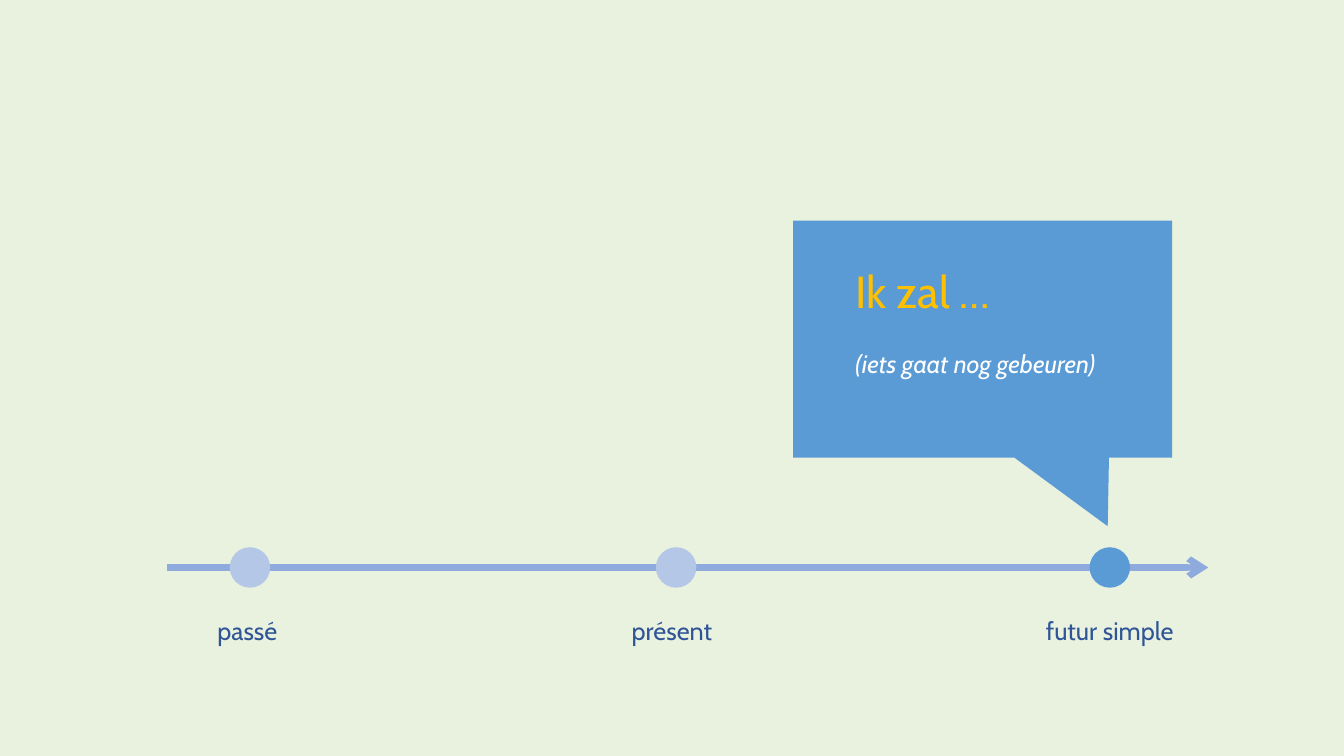
from pptx import Presentation
from pptx import util as u
from pptx.dml.color import RGBColor
from pptx.enum import shapes, text
from pptx.oxml.ns import qn
from lxml import etree

FONT = "Cabin"
BACKGROUND, AXIS, DIM, ACTIVE = "E9F1DF", "8FAADC", "B4C7E7", "5B9BD5"
LABEL, HIGHLIGHT, WHITE = "2F5597", "FFC000", "FFFFFF"

AXIS_Y = 14.3
DOT = 1.02
LABEL_LEFT, LABEL_STEP = 5.23, 10.44

# Tense, centre of its dot, label width, dot colour
TENSES = [
    ("passé", 6.3, 3.18, DIM),
    ("présent", 17.04, 3.18, DIM),
    ("futur simple", 27.97, 5.51, ACTIVE),
]


def paint(fill, color):
    fill.solid()
    fill.fore_color.rgb = RGBColor.from_string(color)


def add_solid(s, kind, left, top, width, height, color):
    """Add a preset shape without outline or shadow; lengths in cm."""
    sp = s.shapes.add_shape(kind, u.Cm(left), u.Cm(top), u.Cm(width), u.Cm(height))
    paint(sp.fill, color)
    sp.line.fill.background()
    sp.shadow.inherit = False
    return sp


def add_arrow(s, x1, x2, y, color, weight):
    line = s.shapes.add_connector(
        shapes.MSO_CONNECTOR.STRAIGHT, u.Cm(x1), u.Cm(y), u.Cm(x2), u.Cm(y))
    paint(line.line.fill, color)
    line.line.width = u.Pt(weight)
    etree.SubElement(line.line._get_or_add_ln(), qn("a:tailEnd"), type="arrow")
    etree.SubElement(line._element.spPr, qn("a:effectLst"))


def add_text_frame(s, left, top, width, height):
    tf = s.shapes.add_textbox(u.Cm(left), u.Cm(top), u.Cm(width), u.Cm(height)).text_frame
    tf.word_wrap = True
    tf.auto_size = text.MSO_AUTO_SIZE.SHAPE_TO_FIT_TEXT
    return tf


def write(p, words, size=18, color=LABEL, italic=False, before=0):
    p.space_before = u.Pt(before)
    r = p.add_run()
    r.text = words
    r.font.name = FONT
    r.font.size = u.Pt(size)
    r.font.italic = italic
    r.font.color.rgb = RGBColor.from_string(color)


def add_timeline(s):
    add_arrow(s, 4.22, 30.45, AXIS_Y, AXIS, 4.5)
    for i, (tense, center, width, color) in enumerate(TENSES):
        add_solid(s, shapes.MSO_SHAPE.OVAL, center - DOT / 2, AXIS_Y - DOT / 2, DOT, DOT, color)
        tf = add_text_frame(s, LABEL_LEFT + i * LABEL_STEP, 15.39, width, 1.02)
        write(tf.paragraphs[0], tense)


def add_callout(s):
    sp = add_solid(s, shapes.MSO_SHAPE.RECTANGULAR_CALLOUT, 19.99, 5.56, 9.55, 5.97, ACTIVE)
    sp.adjustments[0], sp.adjustments[1] = 0.33, 0.79
    tf = add_text_frame(s, 21.31, 6.53, 9.32, 3.18)
    write(tf.paragraphs[0], "Ik zal …", size=32, color=HIGHLIGHT)
    write(tf.add_paragraph(), "(iets gaat nog gebeuren)", color=WHITE, italic=True, before=22)


def main():
    prs = Presentation()
    prs.slide_width, prs.slide_height = u.Cm(33.87), u.Cm(19.05)
    s = prs.slides.add_slide(prs.slide_layouts[6])
    paint(s.background.fill, BACKGROUND)
    add_timeline(s)
    add_callout(s)
    prs.save("out.pptx")


if __name__ == "__main__":
    main()
